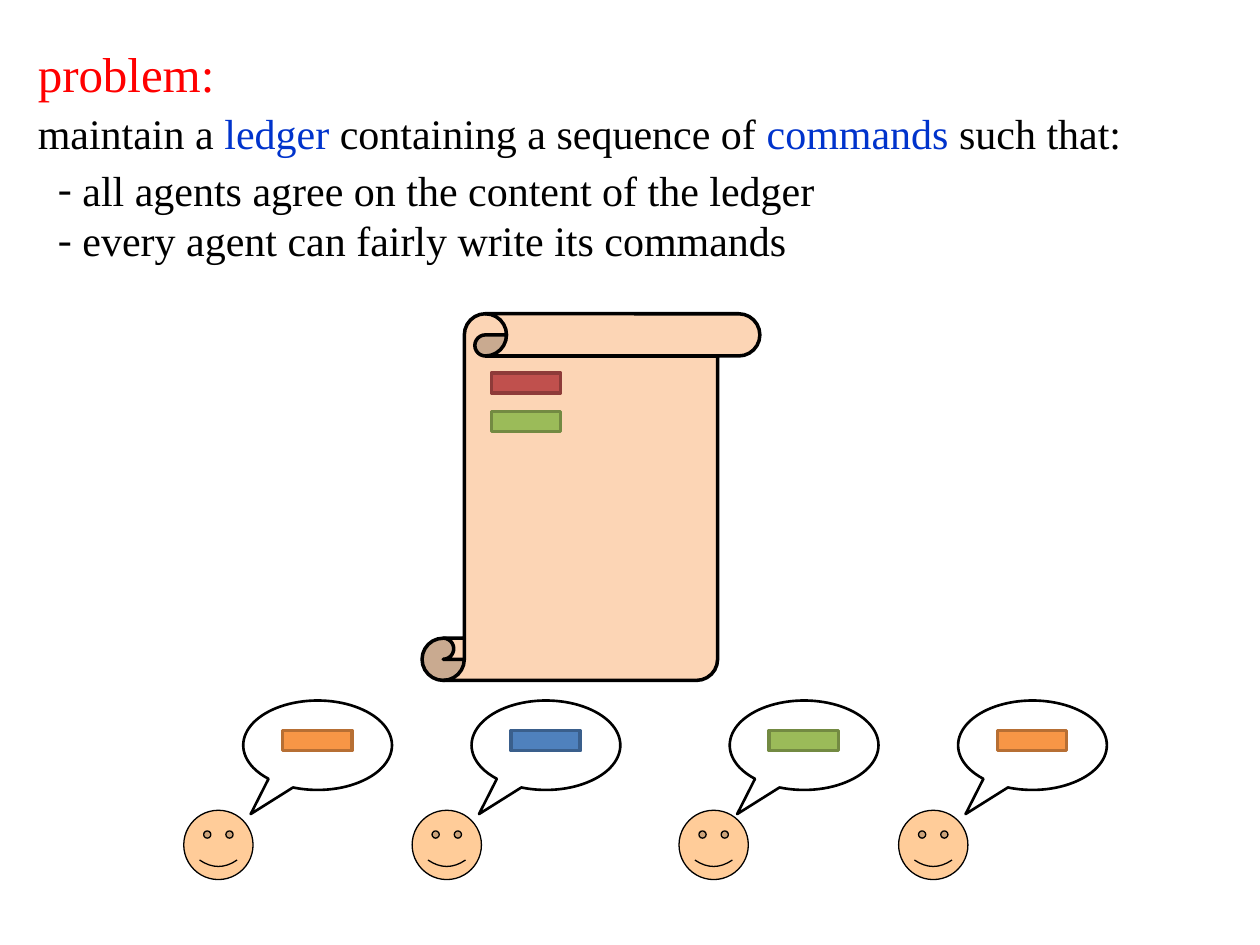
from lxml import etree
from pptx import Presentation
from pptx.dml.color import RGBColor
from pptx.enum.shapes import MSO_SHAPE
from pptx.enum.text import MSO_ANCHOR, MSO_AUTO_SIZE, PP_ALIGN
from pptx.oxml.ns import qn
from pptx.util import Pt

SCROLL = MSO_SHAPE.VERTICAL_SCROLL
FACE = MSO_SHAPE.SMILEY_FACE
BUBBLE = MSO_SHAPE.OVAL_CALLOUT
RECTANGLE = MSO_SHAPE.RECTANGLE
TOP = MSO_ANCHOR.TOP
NO_FIT = MSO_AUTO_SIZE.NONE
LEFT = PP_ALIGN.LEFT

FONT = "Times New Roman"
BLACK, RED, BLUE = "000000", "FF0000", "0033CC"
COMMANDS = {
    "orange": ("F79646", "B76F34"),
    "red": ("C0504D", "8E3B39"),
    "green": ("9BBB59", "738A42"),
    "blue": ("4F81BD", "3A5F8C"),
}
LEAD = [
    ("maintain a ", BLACK),
    ("ledger", BLUE),
    (" containing a sequence of ", BLACK),
    ("commands", BLUE),
    (" such that:", BLACK),
]
REQUIREMENTS = [
    ("all agents agree on the content of the ledger", 4),
    ("every agent can fairly write its commands", 0),
]
LEDGER_ENTRIES = ["red", "green"]
AGENTS = [
    (105, 139, "orange"),
    (235.5, 269.5, "blue"),
    (388, 417, "green"),
    (513.5, 547.5, "orange"),
]


def color(hex_string):
    """Turn a hex string into a colour."""
    return RGBColor.from_string(hex_string)


def place(holder, left, top, width, height):
    """Move a placeholder and return its prepared text frame."""
    holder.left, holder.top = Pt(left), Pt(top)
    holder.width, holder.height = Pt(width), Pt(height)
    frame = holder.text_frame
    frame.auto_size = NO_FIT
    frame.vertical_anchor = TOP
    frame.word_wrap = True
    return frame


def add_run(paragraph, text, size, hex_string):
    """Add one formatted run."""
    run = paragraph.add_run()
    run.text = text
    run.font.name = FONT
    run.font.size = Pt(size)
    run.font.color.rgb = color(hex_string)


def format_paragraph(paragraph, before=0, margin=0, hanging=0, bullet=None):
    """Set the spacing, indent and bullet of a paragraph."""
    paragraph.alignment = LEFT
    paragraph.space_before = Pt(before)
    properties = paragraph._p.get_or_add_pPr()
    properties.set("marL", str(Pt(margin)))
    properties.set("indent", str(-Pt(hanging)))
    if bullet:
        etree.SubElement(properties, qn("a:buFont")).set("typeface", FONT)
        etree.SubElement(properties, qn("a:buChar")).set("char", bullet)
    else:
        etree.SubElement(properties, qn("a:buNone"))


def add_figure(slide, kind, box, fill, line, weight):
    """Add a preset shape with a fill, or none, and an outline."""
    figure = slide.shapes.add_shape(kind, *map(Pt, box))
    figure.shadow.inherit = False
    if fill:
        figure.fill.solid()
        figure.fill.fore_color.rgb = color(fill)
    else:
        figure.fill.background()
    figure.line.color.rgb = color(line)
    figure.line.width = Pt(weight)
    return figure


def add_command(slide, left, top, name):
    """Add a command block of the named colour."""
    add_figure(slide, RECTANGLE, (left, top, 39.6, 11.5), *COMMANDS[name], 2)


def add_agent(slide, face_left, bubble_left, command):
    """Add an agent whose speech bubble holds a command."""
    add_figure(slide, FACE, (face_left, 463, 39.6, 39.6), "FFCC99", BLACK, 0.75)
    bubble = add_figure(slide, BUBBLE, (bubble_left, 400.3, 85, 51.1), None, BLACK, 1.5)
    bubble.adjustments[0] = -0.45
    bubble.adjustments[1] = 0.77
    add_command(slide, bubble_left + 22.5, 417.5, command)


def add_ledger(slide):
    """Add the scroll with the commands written so far."""
    add_figure(slide, SCROLL, (241.2, 179.3, 193, 209.5), "FCD5B5", BLACK, 2)
    for row, command in enumerate(LEDGER_ENTRIES):
        add_command(slide, 280.8, 213.1 + 22 * row, command)


def write_problem(slide):
    """Write the heading, the problem and its requirements."""
    heading = place(slide.shapes.title, 14.4, 21, 117, 41).paragraphs[0]
    format_paragraph(heading)
    add_run(heading, "problem:", 28, RED)

    statement = place(slide.placeholders[1], 14.4, 57.6, 703, 96)
    lead = statement.paragraphs[0]
    format_paragraph(lead)
    for text, hex_string in LEAD:
        add_run(lead, text, 24, hex_string)
    for text, before in REQUIREMENTS:
        requirement = statement.add_paragraph()
        format_paragraph(requirement, before, 25.5, 14, "-")
        add_run(requirement, text, 24, BLACK)


def main():
    """Build the slide and save it."""
    deck = Presentation()
    deck.slide_width, deck.slide_height = Pt(720), Pt(540)
    slide = deck.slides.add_slide(deck.slide_layouts[1])
    write_problem(slide)
    add_ledger(slide)
    for agent in AGENTS:
        add_agent(slide, *agent)
    deck.save("out.pptx")


if __name__ == "__main__":
    main()
